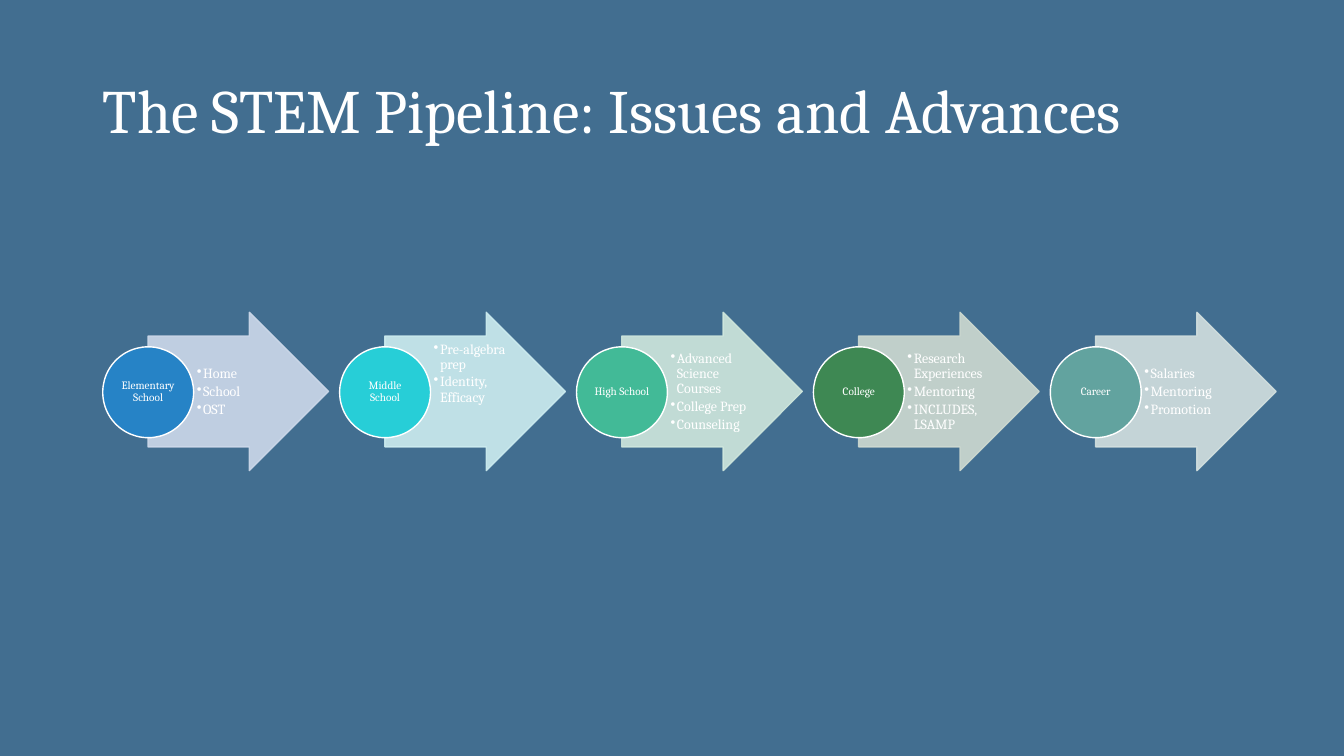
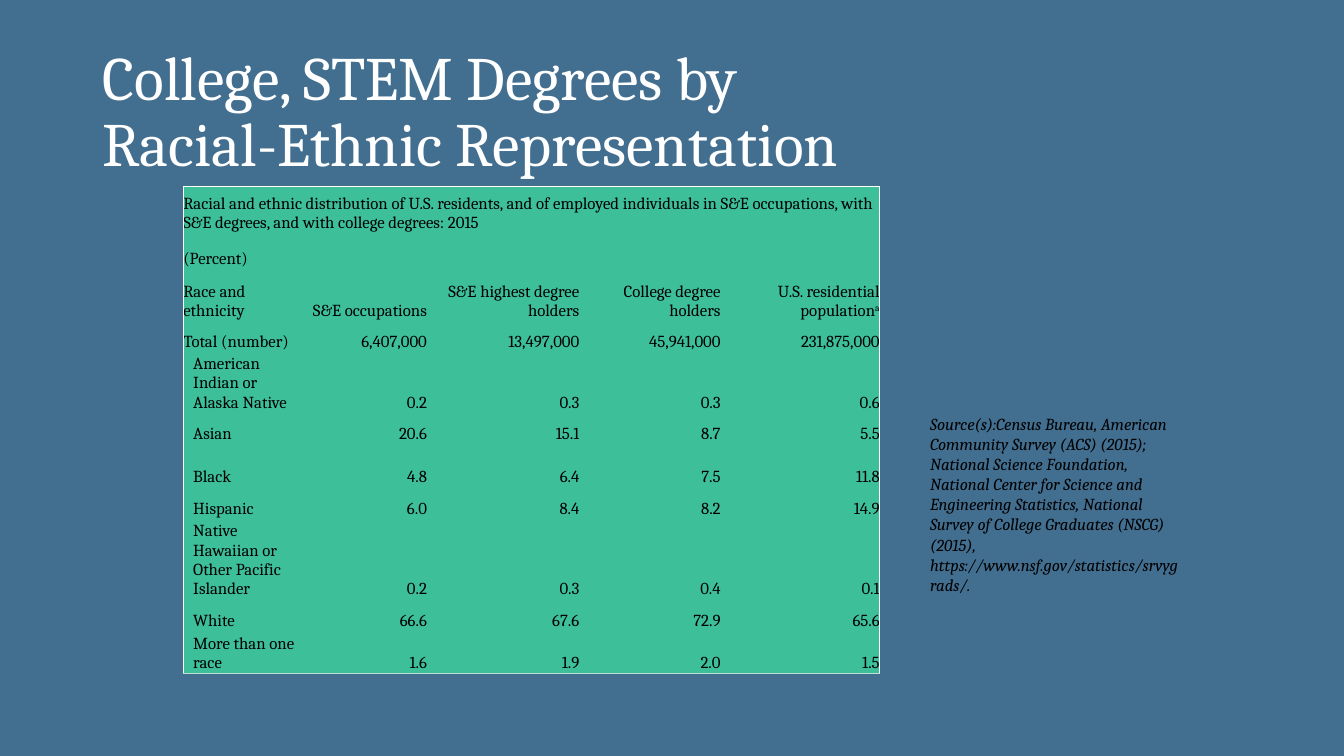
from lxml import etree
from pptx import Presentation
from pptx.dml.color import RGBColor
from pptx.enum.shapes import MSO_SHAPE
from pptx.enum.text import MSO_ANCHOR, PP_ALIGN
from pptx.oxml.ns import qn
from pptx.util import Cm, Pt

ARROW, CIRCLE = MSO_SHAPE.RIGHT_ARROW, MSO_SHAPE.OVAL
TOP, MIDDLE, BOTTOM = MSO_ANCHOR.TOP, MSO_ANCHOR.MIDDLE, MSO_ANCHOR.BOTTOM
LEFT, CENTER, RIGHT = PP_ALIGN.LEFT, PP_ALIGN.CENTER, PP_ALIGN.RIGHT

COLORS = {"back": "426E90", "white": "FFFFFF", "black": "000000",
          "table": "3DBF9A", "rule": "C0E0D3"}
FONT = "Cambria"

STAGES = [
    ("Elementary School", "2683C6", "CDD9EA", ["Home", "School", "OST"]),
    ("Middle School", "27CED7", "CDEDF0", ["Pre-algebra prep", "Identity, Efficacy"]),
    ("High School", "42BA97", "CFE7DD",
     ["Advanced Science Courses", "College Prep", "Counseling"]),
    ("College", "3E8853", "CEDAD1",
     ["Research Experiences", "Mentoring", "INCLUDES, LSAMP"]),
    ("Career", "62A39F", "D3E0DF", ["Salaries", "Mentoring", "Promotion"]),
]
STAGE_PITCH = 5.97
RAISED_STAGE = "Middle School"

COLUMN_WIDTHS = [2.84, 3.3, 3.84, 3.56, 4.01]
ROW_HEIGHTS = [1.17, 0.91, 1.3, 0.79, 1.47, 0.79, 1.09, 0.79, 1.96, 0.79, 1.07]
FIRST_GROUP_ROW = 4
TABLE_ROWS = [
    ["Racial and ethnic distribution of U.S. residents, and of employed individuals "
     "in S&E occupations, with S&E degrees, and with college degrees: 2015"],
    ["(Percent)"],
    ["Race and ethnicity", "S&E occupations", "S&E highest degree holders",
     "College degree holders", "U.S. residential population"],
    ["Total (number)", "6,407,000", "13,497,000", "45,941,000", "231,875,000"],
    ["American Indian or Alaska Native", "0.2", "0.3", "0.3", "0.6"],
    ["Asian", "20.6", "15.1", "8.7", "5.5"],
    ["Black", "4.8", "6.4", "7.5", "11.8"],
    ["Hispanic", "6.0", "8.4", "8.2", "14.9"],
    ["Native Hawaiian or Other Pacific Islander", "0.2", "0.3", "0.4", "0.1"],
    ["White", "66.6", "67.6", "72.9", "65.6"],
    ["More than one race", "1.6", "1.9", "2.0", "1.5"],
]
SOURCE = ("Source(s):Census Bureau, American Community Survey (ACS) (2015); "
          "National Science Foundation, National Center for Science and Engineering "
          "Statistics, National Survey of College Graduates (NSCG) (2015), "
          "https://www.nsf.gov/statistics/srvygrads/.")


class StemDeck:
    """Holds the deck's style and its current slide."""

    def __init__(self):
        self.deck = Presentation()
        self.deck.slide_width, self.deck.slide_height = Cm(33.87), Cm(19.05)
        self.page = None

    def color(self, name):
        return RGBColor.from_string(COLORS.get(name, name))

    def new_page(self, title_lines):
        self.page = self.deck.slides.add_slide(self.deck.slide_layouts[6])
        back = self.page.background.fill
        back.solid()
        back.fore_color.rgb = self.color("back")
        frame = self.text_box(2.34, 1.02, 29.21, 3.68, MIDDLE)
        para = frame.paragraphs[0]
        para.line_spacing = 0.9
        for index, line in enumerate(title_lines):
            if index:
                para.add_line_break()
            self.span(para, line, 44, "white")

    def span(self, para, text, size, color, italic=None):
        span = para.add_run()
        span.text = text
        font = span.font
        font.name, font.size, font.italic = FONT, Pt(size), italic
        font.color.rgb = self.color(color)
        return span

    def margins(self, target, left, top, right, bottom):
        target.margin_left, target.margin_top = Cm(left), Cm(top)
        target.margin_right, target.margin_bottom = Cm(right), Cm(bottom)

    def text_box(self, left, top, width, height, anchor=TOP):
        box = self.page.shapes.add_textbox(Cm(left), Cm(top), Cm(width), Cm(height))
        frame = box.text_frame
        frame.word_wrap = True
        frame.vertical_anchor = anchor
        return frame

    def shape(self, kind, left, top, width, height, fill, line):
        shape = self.page.shapes.add_shape(kind, Cm(left), Cm(top), Cm(width), Cm(height))
        shape.shadow.inherit = False
        shape.fill.solid()
        shape.fill.fore_color.rgb = self.color(fill)
        shape.line.color.rgb = self.color(line)
        shape.line.width = Pt(1)
        return shape

    def arrow(self, left, top, width, height, fill):
        arrow = self.shape(ARROW, left, top, width, height, fill, fill)
        arrow.adjustments[0], arrow.adjustments[1] = 0.7, 0.5
        for color in arrow._element.spPr.iter(qn("a:srgbClr")):
            etree.SubElement(color, qn("a:alpha"), val="90000")

    def circle(self, left, top, size, fill, label):
        frame = self.shape(CIRCLE, left, top, size, size, fill, "white").text_frame
        frame.word_wrap = True
        frame.vertical_anchor = MIDDLE
        self.margins(frame, 0.03, 0.03, 0.03, 0.03)
        para = frame.paragraphs[0]
        para.alignment, para.line_spacing = CENTER, 0.9
        self.span(para, label, 8, "white")

    def bullets(self, left, top, width, height, items, bottom_margin):
        frame = self.text_box(left, top, width, height, MIDDLE)
        self.margins(frame, 0.08, 0.03, 0.03, bottom_margin)
        for index, item in enumerate(items):
            para = frame.add_paragraph() if index else frame.paragraphs[0]
            props = para._p.get_or_add_pPr()
            props.set("marL", str(Cm(0.16)))
            props.set("indent", str(-Cm(0.16)))
            etree.SubElement(props, qn("a:buChar"), char="•")
            para.line_spacing, para.space_after = 0.9, Pt(1.8)
            self.span(para, item, 10, "white")

    def note(self, left, top, width, height, text):
        frame = self.text_box(left, top, width, height)
        self.span(frame.paragraphs[0], text, 12, "black", italic=True)

    def borders(self, cell, edges):
        props = cell._tc.get_or_add_tcPr()
        for index, side in enumerate("LRTB"):
            color, width = edges.get(side, (None, 0))
            line = etree.Element(qn("a:ln" + side), w=str(Pt(width)))
            if color:
                fill = etree.SubElement(line, qn("a:solidFill"))
                etree.SubElement(fill, qn("a:srgbClr"), val=COLORS[color])
            else:
                etree.SubElement(line, qn("a:noFill"))
            props.insert(index, line)

    def cell(self, cell, text, align, indent, edges):
        cell.fill.solid()
        cell.fill.fore_color.rgb = self.color("table")
        cell.vertical_anchor = BOTTOM
        self.margins(cell, indent, 0, 0, 0)
        self.borders(cell, edges)
        para = cell.text_frame.paragraphs[0]
        para.alignment = align
        if text:
            self.span(para, text, 12, "black")

    def table(self, left, top, widths, heights, rows):
        table = self.page.shapes.add_table(
            len(heights), len(widths), Cm(left), Cm(top),
            Cm(sum(widths)), Cm(sum(heights))).table
        table.first_row = table.horz_banding = False
        for column, width in zip(table.columns, widths):
            column.width = Cm(width)
        last_row, last_column = len(heights) - 1, len(widths) - 1
        for r, (height, texts) in enumerate(zip(heights, rows)):
            table.rows[r].height = Cm(height)
            for c in range(len(widths)):
                edges = {}
                if c == 0:
                    edges["L"] = ("white", 1)
                if c == last_column or r == 0:
                    edges["R"] = ("white", 1)
                if r == 0:
                    edges["T"] = ("white", 1)
                if r == last_row:
                    edges["B"] = ("rule", 0.5)
                indent = 0.25 if c == 0 and r >= FIRST_GROUP_ROW else 0
                self.cell(table.cell(r, c), texts[c] if c < len(texts) else "",
                          RIGHT if c else LEFT, indent, edges)
        table.cell(0, 0).merge(table.cell(0, last_column))
        return table


def main():
    stem = StemDeck()

    stem.new_page(["The STEM Pipeline: Issues and Advances"])
    for index, (label, dark, light, items) in enumerate(STAGES):
        left = 2.59 + index * STAGE_PITCH
        stem.arrow(left + 1.14, 7.87, 4.55, 3.99, light)
        bottom_margin = 0.95 if label == RAISED_STAGE else 0.03
        stem.bullets(left + 2.29, 8.48, 2.21, 2.79, items, bottom_margin)
        stem.circle(left, 8.74, 2.29, dark, label)

    stem.new_page(["College, STEM Degrees by", "Racial-Ethnic Representation"])
    table = stem.table(4.62, 4.7, COLUMN_WIDTHS, ROW_HEIGHTS, TABLE_ROWS)
    heading = table.cell(2, 4).text_frame.paragraphs[0]
    footnote_mark = stem.span(heading, "a", 12, "black")
    footnote_mark._r.get_or_add_rPr().set("baseline", "30000")
    stem.note(23.19, 10.29, 6.78, 5.38, SOURCE)

    stem.deck.save("out.pptx")


if __name__ == "__main__":
    main()
